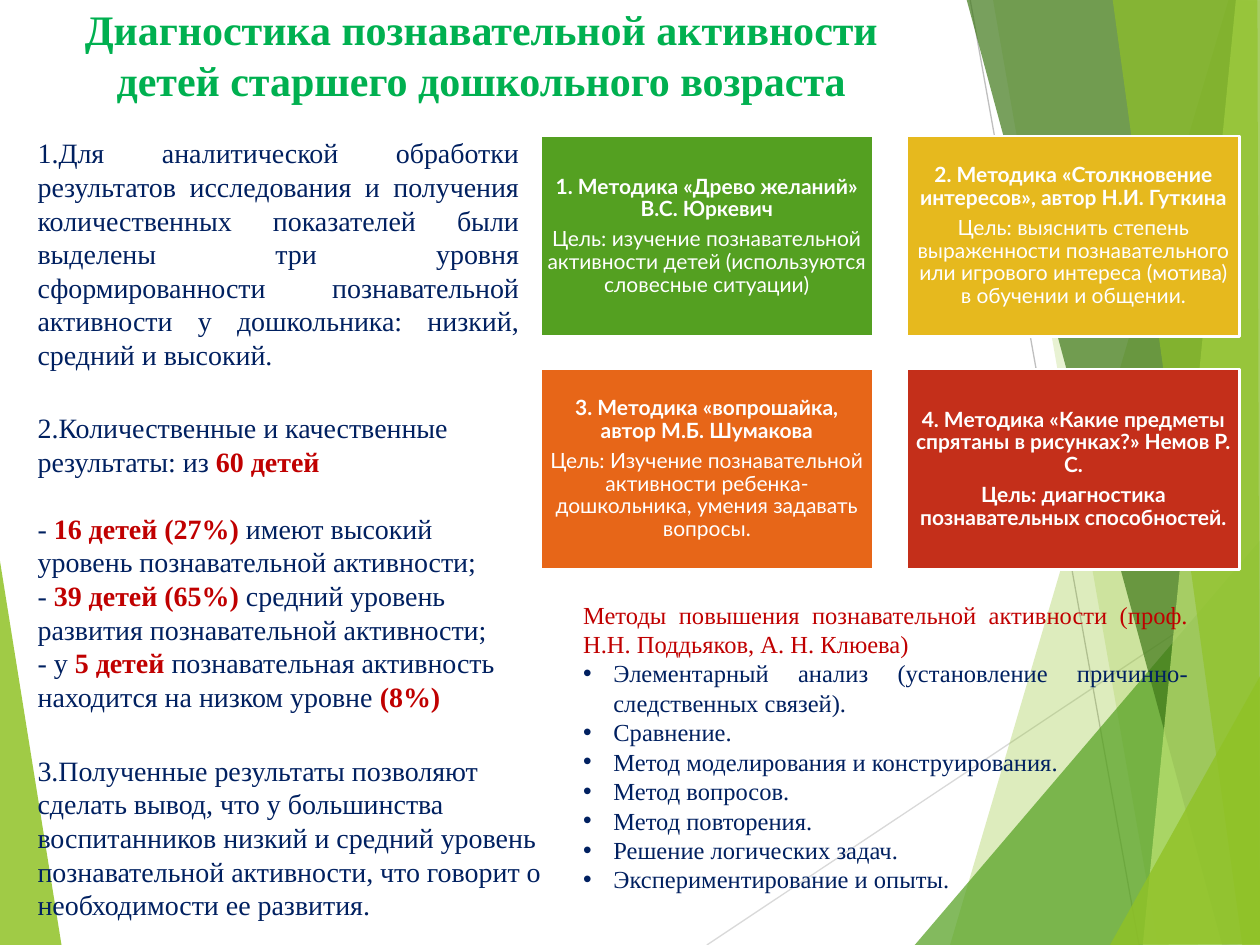
"""Builds the slide on diagnosing the cognitive activity of preschool children."""
from lxml import etree
from pptx import Presentation
from pptx.dml.color import RGBColor
from pptx.enum.shapes import MSO_CONNECTOR, MSO_SHAPE
from pptx.enum.text import MSO_ANCHOR, PP_ALIGN
from pptx.oxml.ns import qn
from pptx.util import Inches, Pt

LEFT, CENTER, JUSTIFY = PP_ALIGN.LEFT, PP_ALIGN.CENTER, PP_ALIGN.JUSTIFY
TOP, MIDDLE = MSO_ANCHOR.TOP, MSO_ANCHOR.MIDDLE
RECTANGLE, STRAIGHT = MSO_SHAPE.RECTANGLE, MSO_CONNECTOR.STRAIGHT
SERIF, SANS = "Times New Roman", "Lato"
NAVY, RED, GREEN, WHITE = "002060", "C00000", "00B050", "FFFFFF"

LEFT_FACET = [("90C226", 85, [(-0.01, 4.39), (0.49, 7.51), (-0.01, 7.5)])]
RAYS = [
    ("D9D9D9", (5.61, 7.5), (10.01, 4.57)),
    ("BFBFBF", (7.7, 0), (9.04, 7.5)),
]
RIGHT_FACETS = [
    ("90C226", 30, [(9.75, 0), (7.54, 7.5), (10.02, 7.51), (10.01, 0.01)]),
    ("90C226", 20, [(7.88, -0.01), (9.19, 7.5), (10.01, 7.5), (10.01, -0.01)]),
    ("54A021", 72, [(7.26, 7.5), (10, 4.29), (10.01, 7.5)]),
    ("3F7819", 70, [(7.67, -0.01), (9.7, 7.5), (10.01, 7.49), (10.01, -0.01)]),
    ("C0E474", 70, [(9.81, -0.01), (9.07, 7.5), (10.01, 7.5), (10, -0.01)]),
    ("90C226", 65, [(8.83, -0.01), (9.86, 7.5), (10, 7.5), (9.98, -0.01)]),
    ("90C226", 80, [(8.81, 7.5), (10.01, 5.35), (10.01, 7.49)]),
]

TITLE = "Диагностика познавательной активности детей старшего дошкольного возраста"
CARDS = [
    ("54A021", "1. Методика «Древо желаний» В.С. Юркевич",
     "Цель: изучение познавательной активности детей (используются словесные ситуации)", False),
    ("E6B91E", "2. Методика «Столкновение интересов», автор Н.И. Гуткина",
     "Цель: выяснить степень выраженности познавательного или игрового интереса (мотива) "
     "в обучении и общении.", False),
    ("E76618", "3. Методика «вопрошайка, автор М.Б. Шумакова",
     "Цель: Изучение познавательной активности ребенка-дошкольника, умения задавать вопросы.", False),
    ("C42F1A", "4. Методика «Какие предметы спрятаны в рисунках?» Немов Р. С.",
     "Цель: диагностика познавательных способностей.", True),
]
LEVELS = ("1.Для аналитической обработки результатов исследования и получения количественных "
          "показателей были выделены три уровня сформированности познавательной активности "
          "у дошкольника: низкий, средний и высокий.")
RESULTS = [
    [("2.Количественные и качественные результаты: из ", False), ("60 детей", True)],
    [("- ", False), ("16 детей (27%) ", True),
     ("имеют высокий уровень познавательной активности;", False)],
    [("- ", False), ("39 детей (65%) ", True),
     ("средний уровень развития познавательной активности;", False)],
    [("- у ", False), ("5 детей ", True),
     ("познавательная активность находится на низком уровне ", False), ("(8%)", True)],
]
CONCLUSION = ("3.Полученные результаты позволяют сделать вывод, что у большинства воспитанников "
              "низкий и средний уровень познавательной активности, что говорит о необходимости "
              "ее развития.")
METHODS_HEADING = "Методы повышения познавательной активности (проф. Н.Н. Поддьяков, А. Н. Клюева)"
METHODS = [
    "Элементарный анализ (установление причинно-следственных связей).",
    "Сравнение.",
    "Метод моделирования и конструирования.",
    "Метод вопросов.",
    "Метод повторения.",
    "Решение логических задач.",
    "Экспериментирование и опыты.",
]

CARD_LEFT, CARD_TOP, CARD_WIDTH, CARD_HEIGHT = 4.29, 1.08, 2.64, 1.59
CARD_STEP_X, CARD_STEP_Y = 2.91, 1.85
CARD_INSET = Inches(0.05)
CARD_FRAME = {"vertical_anchor": MIDDLE, "margin_left": CARD_INSET, "margin_top": CARD_INSET,
              "margin_right": CARD_INSET, "margin_bottom": CARD_INSET}
CARD_PARAGRAPH = {"alignment": CENTER, "line_spacing": 0.9, "space_after": Pt(4.2)}
BULLET_INDENT = Inches(0.24)


def color(value):
    return RGBColor.from_string(value)


def apply(target, values):
    for name, value in values.items():
        setattr(target, name, value)


def add_facet(slide, fill, opacity, points):
    corners = [(Inches(x), Inches(y)) for x, y in points]
    builder = slide.shapes.build_freeform(*corners[0], scale=1.0)
    builder.add_line_segments(corners[1:], close=True)
    shape = builder.convert_to_shape()
    shape.shadow.inherit = False
    shape.fill.solid()
    shape.fill.fore_color.rgb = color(fill)
    shape.line.fill.background()
    tint = shape.fill._xPr.find(qn("a:solidFill"))[0]
    etree.SubElement(tint, qn("a:alpha"), val=str(opacity * 1000))


def add_ray(slide, stroke, start, end):
    ray = slide.shapes.add_connector(STRAIGHT, *map(Inches, start + end))
    ray.line.color.rgb = color(stroke)
    ray.line.width = Pt(0.75)
    etree.SubElement(ray._element.spPr, qn("a:effectLst"))


def add_bullet(paragraph):
    properties = paragraph._p.get_or_add_pPr()
    properties.set("marL", str(BULLET_INDENT))
    properties.set("indent", str(-BULLET_INDENT))
    etree.SubElement(properties, qn("a:buFont"), typeface="Arial")
    etree.SubElement(properties, qn("a:buChar"), char="•")


def write(frame, paragraphs, font, size):
    """Fills a frame from (runs, paragraph format) pairs; a run is (text, colour, bold)."""
    frame.word_wrap = True
    for index, (runs, layout) in enumerate(paragraphs):
        paragraph = frame.paragraphs[0] if index == 0 else frame.add_paragraph()
        apply(paragraph, layout)
        for text, ink, bold in runs:
            run = paragraph.add_run()
            run.text = text
            apply(run.font, {"name": font, "size": Pt(size), "bold": bold})
            run.font.color.rgb = color(ink)


def add_text(slide, box, paragraphs, size):
    frame = slide.shapes.add_textbox(*map(Inches, box)).text_frame
    frame.vertical_anchor = TOP
    write(frame, paragraphs, SERIF, size)
    return frame


def add_card(slide, index, fill, heading, goal, goal_bold):
    row, column = divmod(index, 2)
    box = (CARD_LEFT + column * CARD_STEP_X, CARD_TOP + row * CARD_STEP_Y, CARD_WIDTH, CARD_HEIGHT)
    card = slide.shapes.add_shape(RECTANGLE, *map(Inches, box))
    card.shadow.inherit = False
    card.fill.solid()
    card.fill.fore_color.rgb = color(fill)
    card.line.color.rgb = color(WHITE)
    card.line.width = Pt(1.5)
    apply(card.text_frame, CARD_FRAME)
    lines = [(heading, WHITE, True), (goal, WHITE, goal_bold)]
    write(card.text_frame, [([line], CARD_PARAGRAPH) for line in lines], SANS, 12)


def main():
    presentation = Presentation()
    apply(presentation, {"slide_width": Inches(10), "slide_height": Inches(7.5)})
    slide = presentation.slides.add_slide(presentation.slide_layouts[6])

    for facet in LEFT_FACET:
        add_facet(slide, *facet)
    for ray in RAYS:
        add_ray(slide, *ray)
    for facet in RIGHT_FACETS:
        add_facet(slide, *facet)

    add_text(slide, (0.35, -0.02, 6.94, 1.44), [([(TITLE, GREEN, True)], {"alignment": CENTER})], 24)
    for index, card in enumerate(CARDS):
        add_card(slide, index, *card)

    add_text(slide, (0.2, 5.93, 4.44, 1.45), [([(CONCLUSION, NAVY, False)], {"alignment": LEFT})], 16)
    add_text(slide, (0.2, 1.03, 4.02, 1.99), [([(LEVELS, NAVY, False)], {"alignment": JUSTIFY})], 16)
    results = [([(text, RED if strong else NAVY, strong) for text, strong in runs],
                {"alignment": LEFT, "space_before": Pt(19.2 if index == 1 else 0)})
               for index, runs in enumerate(RESULTS)]
    add_text(slide, (0.2, 3.21, 4.05, 2.52), results, 16)

    lines = [(METHODS_HEADING, RED, False)] + [(method, NAVY, False) for method in METHODS]
    methods = add_text(slide, (4.53, 4.71, 5, 2.46),
                       [([line], {"alignment": JUSTIFY}) for line in lines], 14)
    for paragraph in methods.paragraphs[1:]:
        add_bullet(paragraph)

    presentation.save("out.pptx")


if __name__ == "__main__":
    main()
